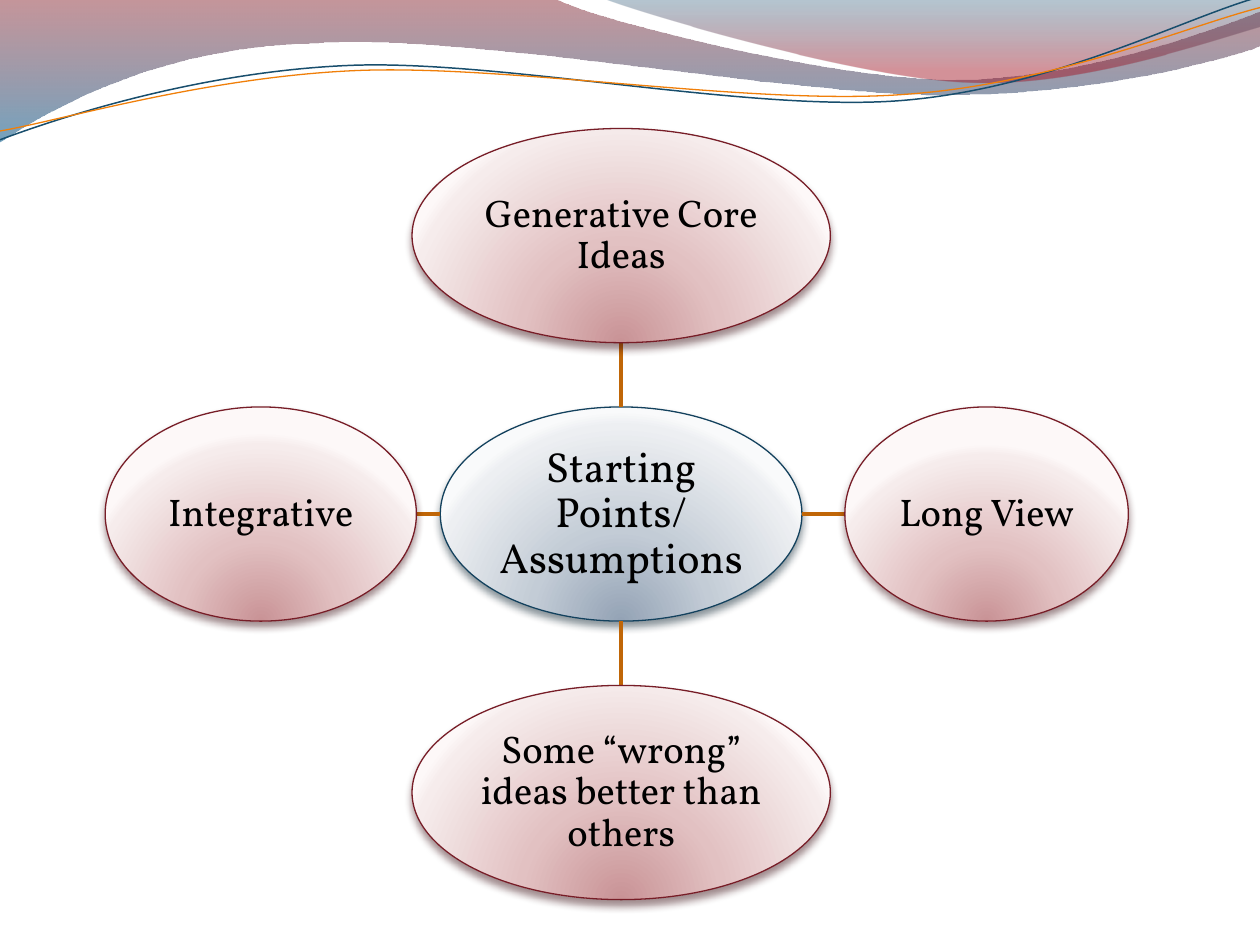
from math import cos, radians, sin

from lxml import etree
from pptx import Presentation
from pptx.dml.color import RGBColor
from pptx.enum.shapes import MSO_CONNECTOR, MSO_SHAPE
from pptx.enum.text import MSO_ANCHOR, PP_ALIGN
from pptx.oxml.ns import qn
from pptx.util import Inches, Pt

STRAIGHT, OVAL = MSO_CONNECTOR.STRAIGHT, MSO_SHAPE.OVAL
MIDDLE, CENTER = MSO_ANCHOR.MIDDLE, PP_ALIGN.CENTER

FONT = "Vollkorn"
BLACK = RGBColor(0x00, 0x00, 0x00)
SPOKE = RGBColor(0xC0, 0x66, 0x07)
NAVY = RGBColor(0x18, 0x4E, 0x6D)
ORANGE = RGBColor(0xF0, 0x7F, 0x09)
WINE = RGBColor(0x7E, 0x16, 0x21)
BLUE = RGBColor(0x00, 0x56, 0x89)
DEEP_BLUE = RGBColor(0x09, 0x44, 0x67)
RED = RGBColor(0xA1, 0x0F, 0x1F)

BLUE_STYLE = {
    "stops": [(0, RGBColor(0x94, 0xA3, 0xB5), 100), (43, RGBColor(0xC3, 0xCC, 0xD6), 100),
              (93, RGBColor(0xED, 0xEF, 0xF2), 100), (100, RGBColor(0xF9, 0xFA, 0xFB), 100)],
    "line": RGBColor(0x13, 0x41, 0x5D), "shadow": RGBColor(0x09, 0x1F, 0x2C), "size": 24}
RED_STYLE = {
    "stops": [(0, RGBColor(0xC9, 0x93, 0x96), 100), (43, RGBColor(0xE2, 0xC1, 0xC2), 100),
              (93, RGBColor(0xF6, 0xEC, 0xEC), 100), (100, RGBColor(0xFD, 0xF8, 0xF8), 100)],
    "line": RGBColor(0x77, 0x1D, 0x27), "shadow": RGBColor(0x39, 0x0D, 0x12), "size": 22}

HUB_X, HUB_Y = 4.93, 4.08
OVAL_HEIGHT, ROW_STEP = 1.7, 2.21
HUB = ("Starting Points/ Assumptions", 0, 0, 2.87)
IDEAS = [
    ("Generative Core Ideas", 0, -1, 3.32),
    ("Long View", 2.9, 0, 2.25),
    ("Some “wrong” ideas better than others", 0, 1, 3.32),
    ("Integrative", -2.86, 0, 2.47),
]

BANDS = [
    ((-0.01, -0.01, 10.02, 1.14),
     [(0, 0), (4.4, -0.01),
      (4.76, 0.17, 6.64, 0.63, 7.58, 0.63), (8.53, 0.63, 9.58, 0.26, 10, 0.09), (10.01, 0.36),
      (9.83, 0.44, 8.7, 0.76, 7.46, 0.75), (6.22, 0.75, 3.82, 0.28, 2.57, 0.34),
      (1.29, 0.36, 0.46, 0.83, -0.01, 1.13), (0, 0)],
     [(0, WINE, 45), (100, BLUE, 55)]),
    ((4.79, -0.01, 5.21, 0.7),
     [(4.79, -0.01), (5.09, 0.11, 6.82, 0.62, 7.69, 0.65),
      (8.56, 0.69, 9.61, 0.32, 10, 0.21), (10, 0), (4.79, -0.01)],
     [(0, DEEP_BLUE, 30), (80, RED, 45)]),
]
WAVE_TILT = -2.7
WAVES = [
    ((-0.02, 0.22, 10.02, 0.71),
     [(0, 1.11), (0.48, 0.93, 1.58, 0.57, 2.77, 0.52), (3.95, 0.47, 5.93, 0.89, 7.13, 0.8),
      (8.33, 0.71, 9.38, 0.15, 9.98, -0.02)], NAVY, 0.85),
    ((-0.02, 0.3, 10.03, 0.58),
     [(0, 1.04), (0.47, 0.96, 1.64, 0.61, 2.83, 0.56), (4.03, 0.51, 5.97, 0.84, 7.17, 0.75),
      (8.36, 0.67, 9.41, 0.21, 10, 0.06)], ORANGE, 0.75),
]


def add_color(parent, color, opacity):
    node = etree.SubElement(parent, qn("a:srgbClr"), val=str(color))
    if opacity < 100:
        etree.SubElement(node, qn("a:alpha"), val=str(opacity * 1000))


def gradient_fill(shape, stops, radial):
    shape.fill.gradient()
    gradient = shape.element.spPr.find(qn("a:gradFill"))
    for child in list(gradient):
        gradient.remove(child)
    stop_list = etree.SubElement(gradient, qn("a:gsLst"))
    for position, color, opacity in stops:
        stop = etree.SubElement(stop_list, qn("a:gs"), pos=str(position * 1000))
        add_color(stop, color, opacity)
    if radial:
        center = etree.SubElement(gradient, qn("a:path"), {"path": "circle"})
        etree.SubElement(center, qn("a:fillToRect"), l="50000", t="130000", r="50000", b="-30000")
    else:
        etree.SubElement(gradient, qn("a:lin"), ang="5400000", scaled="0")


def add_outline(slide, frame, outline, close, tilt=0):
    left, top, width, height = (Inches(v) for v in frame)
    mid_x, mid_y = frame[0] + frame[2] / 2, frame[1] + frame[3] / 2
    c, s = cos(radians(-tilt)), sin(radians(-tilt))

    builder = slide.shapes.build_freeform(left, top)
    builder.add_line_segments([(left + width, top + height)], close=close)
    shape = builder.convert_to_shape()
    curve = next(shape.element.iter(qn("a:path")))
    for child in list(curve):
        curve.remove(child)
    for index, step in enumerate(outline):
        tag = "a:cubicBezTo" if len(step) == 6 else "a:lnTo" if index else "a:moveTo"
        segment = etree.SubElement(curve, qn(tag))
        for x, y in zip(step[::2], step[1::2]):
            dx, dy = x - mid_x, y - mid_y
            etree.SubElement(segment, qn("a:pt"),
                             x=str(Inches(dx * c - dy * s + frame[2] / 2)),
                             y=str(Inches(dx * s + dy * c + frame[3] / 2)))
    if close:
        etree.SubElement(curve, qn("a:close"))
    shape.rotation = tilt
    shape.shadow.inherit = False
    return shape


def add_idea(slide, idea, style):
    text, offset, row, width = idea
    oval = slide.shapes.add_shape(
        OVAL, Inches(HUB_X + offset - width / 2),
        Inches(HUB_Y + row * ROW_STEP - OVAL_HEIGHT / 2), Inches(width), Inches(OVAL_HEIGHT))
    gradient_fill(oval, style["stops"], radial=True)
    oval.line.color.rgb = style["line"]
    oval.line.width = Pt(0.75)
    oval.shadow.inherit = False
    shadow = etree.SubElement(
        oval.element.spPr.find(qn("a:effectLst")), qn("a:outerShdw"),
        blurRad=str(Pt(4.5)), dist=str(Pt(3)), dir="5400000", rotWithShape="0")
    add_color(shadow, style["shadow"], 48)

    frame = oval.text_frame
    frame.word_wrap = True
    frame.vertical_anchor = MIDDLE
    frame.margin_left = frame.margin_right = frame.margin_top = frame.margin_bottom = Inches(0.02)
    paragraph = frame.paragraphs[0]
    paragraph.text = text
    paragraph.alignment = CENTER
    paragraph.line_spacing = 0.9
    paragraph.font.name = FONT
    paragraph.font.size = Pt(style["size"])
    paragraph.font.color.rgb = BLACK


def add_spoke(slide, idea):
    _, offset, row, width = idea
    if row:
        start = (HUB_X, HUB_Y + row * OVAL_HEIGHT / 2)
        end = (HUB_X, HUB_Y + row * (ROW_STEP - OVAL_HEIGHT / 2))
    else:
        side = 1 if offset > 0 else -1
        start = (HUB_X + side * HUB[3] / 2, HUB_Y)
        end = (HUB_X + offset - side * width / 2, HUB_Y)
    spoke = slide.shapes.add_connector(STRAIGHT, *(Inches(v) for v in start + end))
    spoke.line.color.rgb = SPOKE
    spoke.line.width = Pt(2)
    etree.SubElement(spoke.element.spPr, qn("a:effectLst"))


def main():
    deck = Presentation()
    deck.slide_width, deck.slide_height = Inches(10), Inches(7.5)
    slide = deck.slides.add_slide(deck.slide_layouts[6])
    for frame, outline, stops in BANDS:
        band = add_outline(slide, frame, outline, close=True)
        gradient_fill(band, stops, radial=False)
        band.line.fill.background()
    for frame, outline, color, weight in WAVES:
        wave = add_outline(slide, frame, outline, close=False, tilt=WAVE_TILT)
        wave.fill.background()
        wave.line.color.rgb = color
        wave.line.width = Pt(weight)
    add_idea(slide, HUB, BLUE_STYLE)
    for idea in IDEAS:
        add_spoke(slide, idea)
        add_idea(slide, idea, RED_STYLE)
    deck.save("out.pptx")


if __name__ == "__main__":
    main()
